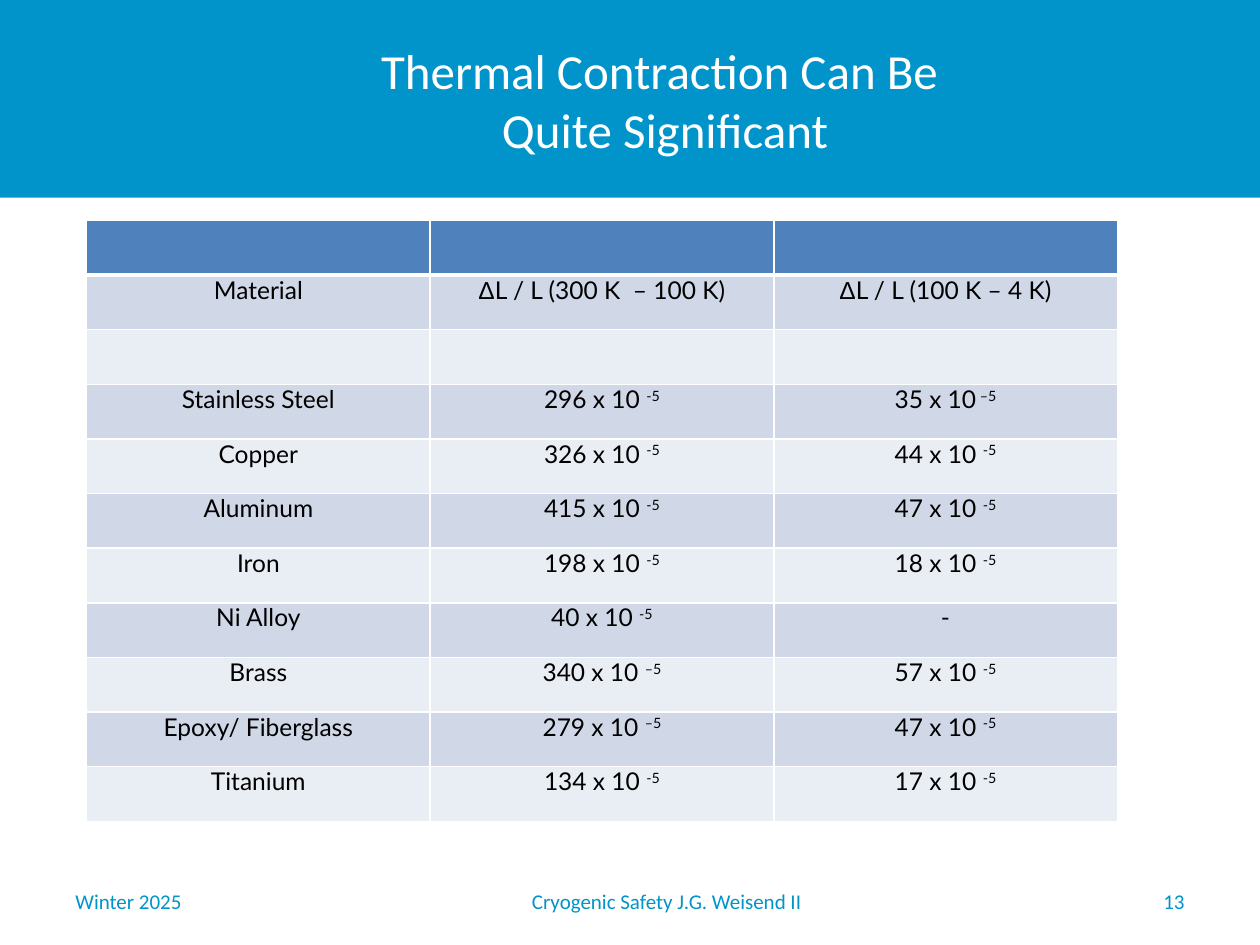
from lxml import etree
from pptx import Presentation
from pptx.dml.color import RGBColor
from pptx.enum.shapes import MSO_CONNECTOR, MSO_SHAPE
from pptx.enum.text import MSO_ANCHOR, PP_ALIGN
from pptx.oxml.ns import qn
from pptx.util import Pt

LEFT, MID, RIGHT = PP_ALIGN.LEFT, PP_ALIGN.CENTER, PP_ALIGN.RIGHT
CENTER = MSO_ANCHOR.MIDDLE
RECT, LINE = MSO_SHAPE.RECTANGLE, MSO_CONNECTOR.STRAIGHT
BLUE, WHITE, BLACK = "0094CA", "FFFFFF", "000000"
HEAD, BANDS = "4F81BD", ("D0D8E8", "E9EDF4")

ROWS = [
    ("", "", ""),
    ("Material", "ΔL / L (300 K  – 100 K)", "ΔL / L (100 K – 4 K)"),
    ("", "", ""),
    ("Stainless Steel", "296 x 10 ^-5", "35 x 10^ –5"),
    ("Copper", "326 x 10 ^-5", "44 x 10 ^-5"),
    ("Aluminum", "415 x 10 ^-5", "47 x 10 ^-5"),
    ("Iron", "198 x 10 ^-5", "18 x 10 ^-5"),
    ("Ni Alloy", "40 x 10 ^-5", "-"),
    ("Brass", "340 x 10 ^–5", "57 x 10 ^-5"),
    ("Epoxy/ Fiberglass", "279 x 10 ^–5", "47 x 10 ^-5"),
    ("Titanium", "134 x 10 ^-5", "17 x 10 ^-5"),
]


def color(code):
    return RGBColor.from_string(code)


def add_run(para, text, size=14, font="Lato", ink=BLACK, base=0):
    run = para.add_run()
    run.text = text
    run.font.size = Pt(size)
    run.font.name = font
    run.font.color.rgb = color(ink)
    if base:
        run._r.get_or_add_rPr().set("baseline", str(base * 1000))


def add_edge(cell, side, width):
    edge = etree.SubElement(cell._tc.get_or_add_tcPr(), qn(f"a:ln{side}"), w=str(Pt(width)))
    fill = etree.SubElement(edge, qn("a:solidFill"))
    etree.SubElement(fill, qn("a:srgbClr"), val=WHITE)


class Deck:
    def __init__(self, font="Calibri"):
        self.font = font
        self.prs = Presentation()
        self.prs.slide_width, self.prs.slide_height = Pt(720), Pt(540)
        self.slide = self.prs.slides.add_slide(self.prs.slide_layouts[6])

    def band(self, x, y, w, h, fill):
        box = self.slide.shapes.add_shape(RECT, Pt(x), Pt(y), Pt(w), Pt(h))
        box.shadow.inherit = False
        box.fill.solid()
        box.fill.fore_color.rgb = color(fill)
        box.line.fill.background()

    def rule(self, x, y, end, ink, width):
        line = self.slide.shapes.add_connector(LINE, Pt(x), Pt(y), Pt(end), Pt(y))
        line.line.color.rgb = color(ink)
        line.line.width = Pt(width)
        etree.SubElement(line._element.spPr, qn("a:effectLst"))

    def text(self, x, y, w, h, lines, align=LEFT, inset=7.2, **style):
        frame = self.slide.shapes.add_textbox(Pt(x), Pt(y), Pt(w), Pt(h)).text_frame
        frame.word_wrap = True
        frame.vertical_anchor = CENTER
        frame.margin_left = frame.margin_right = Pt(inset)
        frame.margin_top = frame.margin_bottom = Pt(inset / 2)
        para = frame.paragraphs[0]
        para.alignment = align
        for i, line in enumerate(lines):
            if i:
                para.add_line_break()
            add_run(para, line, font=self.font, **style)

    def table(self, x, y, w, h, rows):
        shape = self.slide.shapes.add_table(len(rows), len(rows[0]), Pt(x), Pt(y), Pt(w), Pt(h))
        grid = shape.table
        for r, row in enumerate(rows):
            for c, text in enumerate(row):
                fill = BANDS[(r - 1) % 2] if r else HEAD
                self.cell(grid.cell(r, c), text, fill, 3 if r == 1 else 1, 1 if r else 3)

    def cell(self, cell, text, fill, top, bottom):
        for side, width in zip("LRTB", (1, 1, top, bottom)):
            add_edge(cell, side, width)
        cell.fill.solid()
        cell.fill.fore_color.rgb = color(fill)
        if not text:
            return
        cell.margin_left = cell.margin_right = Pt(5)
        cell.margin_top = cell.margin_bottom = 0
        para = cell.text_frame.paragraphs[0]
        para.alignment = MID
        if text.startswith("Δ"):
            add_run(para, "Δ", font="Arial")
            text = text[1:]
        main, _, power = text.partition("^")
        add_run(para, main)
        if power:
            add_run(para, power, base=30)


def main():
    deck = Deck()
    deck.band(0, 0, 720, 113, BLUE)
    deck.rule(0, 114.5, 720, WHITE, 0.5)
    deck.text(141, 0, 478, 114, ["Thermal Contraction Can Be ", "Quite Significant"],
              align=MID, inset=0, size=28, ink=WHITE)
    deck.table(49.5, 126, 589, 343.5, ROWS)
    for x, w, text, align in [
        (36, 168, "Winter 2025", LEFT),
        (246, 270, "Cryogenic Safety J.G. Weisend II", MID),
        (516, 168, "13", RIGHT),
    ]:
        deck.text(x, 500.5, w, 28.75, [text], align=align, size=12, ink=BLUE)
    deck.prs.save("out.pptx")


if __name__ == "__main__":
    main()
